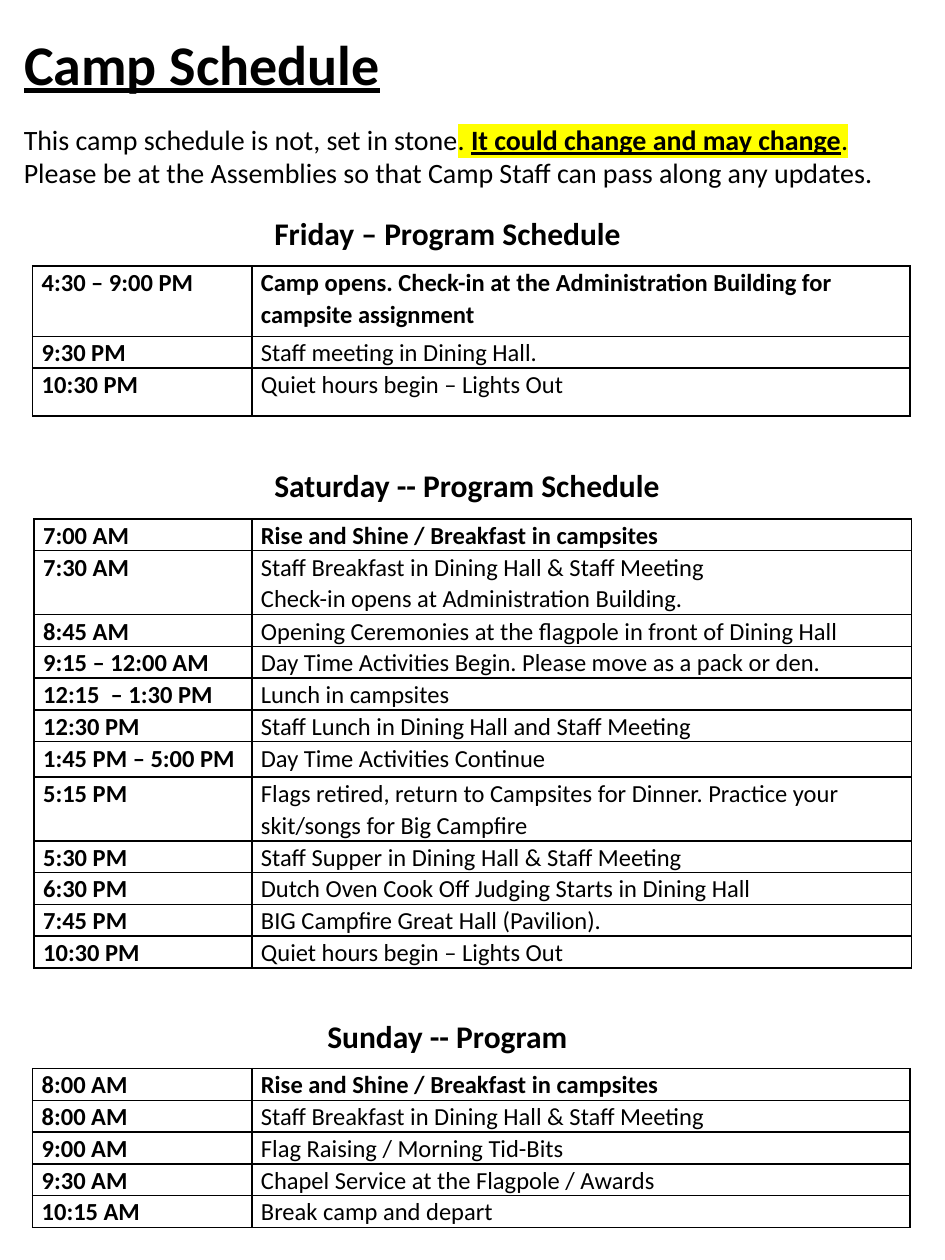
from collections import namedtuple

from lxml import etree
from pptx import Presentation
from pptx.dml.color import RGBColor
from pptx.enum.text import MSO_ANCHOR, MSO_AUTO_SIZE, PP_ALIGN
from pptx.oxml.ns import qn
from pptx.util import Cm, Pt

TOP = MSO_ANCHOR.TOP
LEFT = PP_ALIGN.LEFT
FIXED = MSO_AUTO_SIZE.NONE
TITLE_ONLY = 5

FONT = "Calibri"
COLORS = {"ink": "000000", "paper": "FFFFFF", "marker": "FFFF00"}
ONE_LINE, TWO_LINES = 0.64, 1.29

Box = namedtuple("Box", "left top width height")
Day = namedtuple("Day", "heading heading_box table_box time_width entries")

DAYS = [
    Day("Friday – Program Schedule", Box(5.28, 4.19, 7.54, 1.02),
        Box(0.66, 5.36, 17.68, 3.03), 4.42, [
        ("4:30 – 9:00 PM", "Camp opens. Check-in at the Administration Building for "
         "campsite assignment", 1.42),
        ("9:30 PM", "Staff meeting in Dining Hall.", ONE_LINE),
        ("10:30 PM", "Quiet hours begin – Lights Out", 0.97),
    ]),
    Day("Saturday -- Program Schedule", Box(5.28, 9.27, 9.09, 1.02),
        Box(0.69, 10.46, 17.68, 9.05), 4.39, [
        ("7:00 AM", "Rise and Shine / Breakfast in campsites", ONE_LINE),
        ("7:30 AM", "Staff Breakfast in Dining Hall & Staff Meeting\n"
         "Check-in opens at Administration Building.", TWO_LINES),
        ("8:45 AM", "Opening Ceremonies at the flagpole in front of Dining Hall", ONE_LINE),
        ("9:15 – 12:00 AM", "Day Time Activities Begin. Please move as a pack or den.",
         ONE_LINE),
        ("12:15  – 1:30 PM", "Lunch in campsites", ONE_LINE),
        ("12:30 PM", "Staff Lunch in Dining Hall and Staff Meeting", ONE_LINE),
        ("1:45 PM – 5:00 PM", "Day Time Activities Continue", 0.71),
        ("5:15 PM", "Flags retired, return to Campsites for Dinner. Practice your "
         "skit/songs for Big Campfire", TWO_LINES),
        ("5:30 PM", "Staff Supper in Dining Hall & Staff Meeting", ONE_LINE),
        ("6:30 PM", "Dutch Oven Cook Off Judging Starts in Dining Hall", ONE_LINE),
        ("7:45 PM", "BIG Campfire Great Hall (Pavilion).", ONE_LINE),
        ("10:30 PM", "Quiet hours begin – Lights Out", ONE_LINE),
    ]),
    Day("Sunday -- Program", Box(6.35, 20.37, 5.38, 1.02),
        Box(0.66, 21.54, 17.68, 3.2), 4.42, [
        ("8:00 AM", "Rise and Shine / Breakfast in campsites", ONE_LINE),
        ("8:00 AM", "Staff Breakfast in Dining Hall & Staff Meeting", ONE_LINE),
        ("9:00 AM", "Flag Raising / Morning Tid-Bits", ONE_LINE),
        ("9:30 AM", "Chapel Service at the Flagpole / Awards", ONE_LINE),
        ("10:15 AM", "Break camp and depart", ONE_LINE),
    ]),
]

INTRO = [
    ("This camp schedule is not, set in stone", False, False),
    (". ", False, True),
    ("It could change and may change", True, True),
    (". ", False, True),
    ("Please be at the Assemblies so that Camp Staff can pass along any updates.",
     False, False),
]


def in_cm(box):
    return [Cm(length) for length in box]


def format_span(span, size, bold=False, underline=False):
    span.font.name = FONT
    span.font.size = Pt(size)
    span.font.bold = bold
    span.font.underline = underline
    span.font.color.rgb = RGBColor.from_string(COLORS["ink"])


def highlight(span):
    fill = span.font._element.find(qn("a:solidFill"))
    marker = etree.Element(qn("a:highlight"))
    etree.SubElement(marker, qn("a:srgbClr"), val=COLORS["marker"])
    fill.addnext(marker)


def add_borders(cell):
    properties = cell._tc.get_or_add_tcPr()
    for side in ("lnL", "lnR", "lnT", "lnB"):
        line = etree.SubElement(properties, qn(f"a:{side}"), w=str(Pt(1)))
        fill = etree.SubElement(line, qn("a:solidFill"))
        etree.SubElement(fill, qn("a:srgbClr"), val=COLORS["ink"])


def place_title(page, box):
    title = page.shapes.title
    title.left, title.top, title.width, title.height = in_cm(box)
    frame = title.text_frame
    frame.text = "Camp Schedule"
    frame.auto_size = FIXED
    frame.vertical_anchor = TOP
    para = frame.paragraphs[0]
    para.alignment = LEFT
    format_span(para.runs[0], 32, bold=True, underline=True)


def place_intro(page, box):
    frame = page.shapes.add_textbox(*in_cm(box)).text_frame
    frame.word_wrap = True
    for text, stressed, marked in INTRO:
        span = frame.paragraphs[0].add_run()
        span.text = text
        format_span(span, 16, stressed, stressed)
        if marked:
            highlight(span)


def place_heading(page, box, text):
    frame = page.shapes.add_textbox(*in_cm(box)).text_frame
    frame.word_wrap = False
    frame.text = text
    format_span(frame.paragraphs[0].runs[0], 18, bold=True)


def fill_cell(cell, text, bold):
    cell.margin_left = cell.margin_right = Cm(0.18)
    cell.margin_top = cell.margin_bottom = 0
    add_borders(cell)
    cell.fill.solid()
    cell.fill.fore_color.rgb = RGBColor.from_string(COLORS["paper"])
    cell.text_frame.text = text
    for para in cell.text_frame.paragraphs:
        para.line_spacing = 1.07
        format_span(para.runs[0], 14, bold)


def place_table(page, box, time_width, entries):
    table = page.shapes.add_table(len(entries), 2, *in_cm(box)).table
    table.first_row = table.horz_banding = False
    table.columns[0].width = Cm(time_width)
    table.columns[1].width = Cm(box.width - time_width)
    for index, (time, activity, height) in enumerate(entries):
        table.rows[index].height = Cm(height)
        fill_cell(table.cell(index, 0), time, True)
        fill_cell(table.cell(index, 1), activity, index == 0)


def main():
    deck = Presentation()
    deck.slide_width, deck.slide_height = Cm(19.05), Cm(25.4)
    page = deck.slides.add_slide(deck.slide_layouts[TITLE_ONLY])
    place_title(page, Box(0.23, 0.46, 16.43, 1.63))
    place_intro(page, Box(0.23, 2.34, 18.21, 1.63))
    for day in DAYS:
        place_heading(page, day.heading_box, day.heading)
        place_table(page, day.table_box, day.time_width, day.entries)
    deck.save("out.pptx")


if __name__ == "__main__":
    main()
